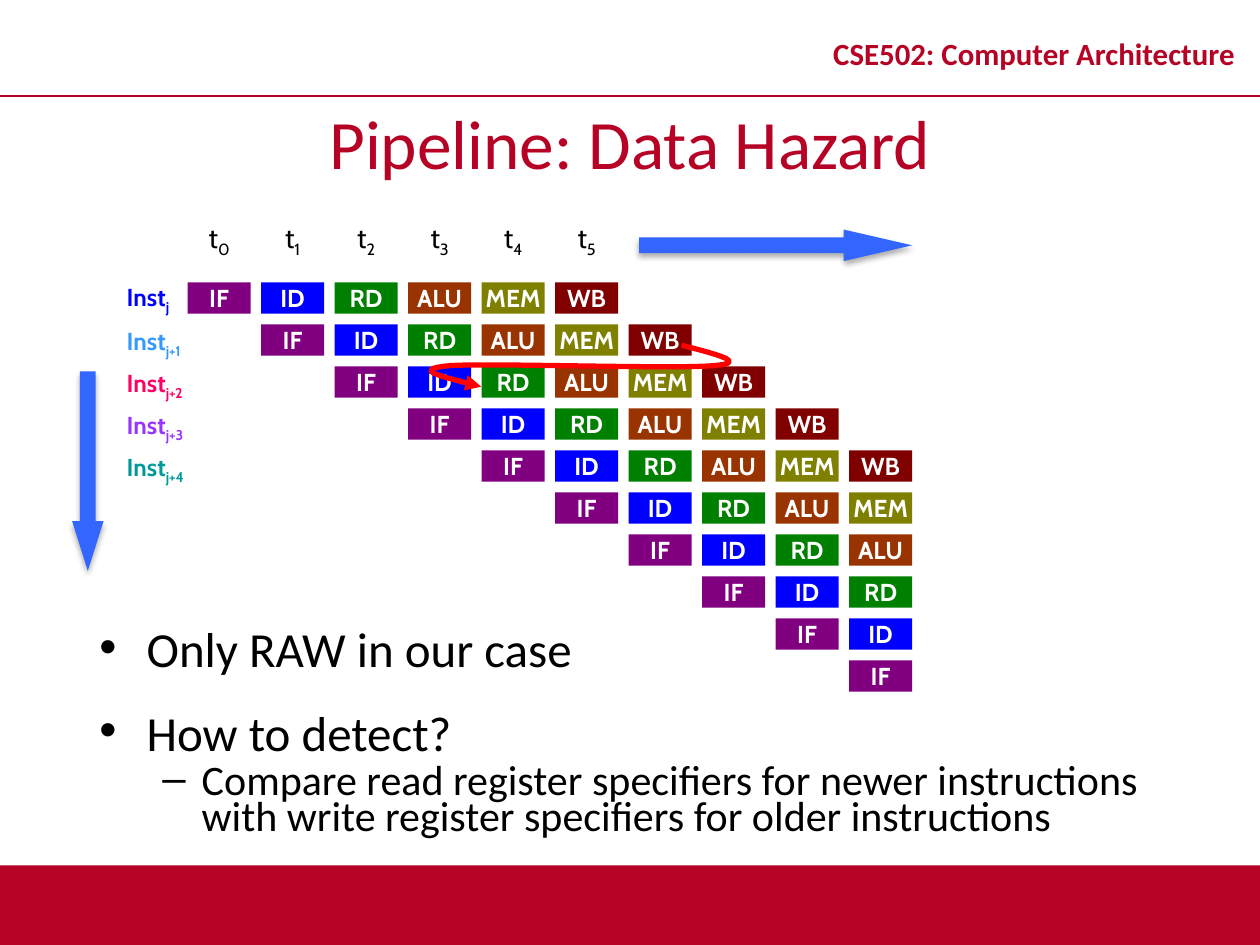
from dataclasses import dataclass
from typing import Optional

from lxml.etree import SubElement
from pptx import Presentation
from pptx.dml.color import RGBColor
from pptx.enum.shapes import MSO_CONNECTOR as Conn, MSO_SHAPE as Shape
from pptx.enum.text import MSO_ANCHOR as Anchor, PP_ALIGN as Align
from pptx.oxml.ns import qn
from pptx.util import Pt

CRIMSON, BLUE, BLACK, WHITE = "B60225", "3366FF", "000000", "FFFFFF"
COL_STEP, ROW_STEP, CELL_W, CELL_H = 42, 24, 36, 18
GRID_LEFT, GRID_TOP, COLUMNS = 107.25, 161.3, 10


@dataclass
class Box:
    left: float
    top: float
    width: float
    height: float

    def lengths(self) -> list:
        return [Pt(v) for v in (self.left, self.top, self.width, self.height)]


@dataclass
class Style:
    size: float
    color: str
    font: str = "Calibri"
    bold: bool = False


@dataclass
class Stage:
    name: str
    color: str


@dataclass
class Instruction:
    subscript: str
    color: str
    top: float
    width: float


@dataclass
class Shadow:
    alpha: int
    blur: float
    distance: float


@dataclass
class Bullet:
    text: str
    char: str
    size: float
    margin: float
    hanging: float
    before: float
    level: int = 0


STAGES = [Stage("IF", "800080"), Stage("ID", "0000FF"), Stage("RD", "008000"),
          Stage("ALU", "993300"), Stage("MEM", "808000"), Stage("WB", "800000")]
INSTRUCTIONS = [Instruction("j", "0000FF", 161.3, 48),
                Instruction("j+1", "3399FF", 186.3, 60),
                Instruction("j+2", "FF0066", 210.3, 66),
                Instruction("j+3", "9933FF", 234.3, 66),
                Instruction("j+4", "009999", 258.3, 72)]
BULLETS = [Bullet("Only RAW in our case", "•", 28, 27, 27, 0),
           Bullet("How to detect?", "•", 28, 27, 27, 24),
           Bullet("Compare read register specifiers for newer instructions "
                  "with write register specifiers for older instructions",
                  "–", 24, 58.5, 22.5, 4.8, 1)]
HAZARD_PATH = [(389.5, 197.3), (409, 202.3), (429, 207.4), (407.5, 209),
               (385.5, 211), (279, 207.4), (257, 209), (235.5, 211),
               (255, 216), (275, 221)]


def rgb(color: str) -> RGBColor:
    return RGBColor.from_string(color)


def style_run(r, style: Style) -> None:
    r.font.size = Pt(style.size)
    r.font.name = style.font
    r.font.bold = style.bold
    r.font.color.rgb = rgb(style.color)


def add_text(slide, box: Box, text: str, style: Style, subscript: str = "",
             align=Align.CENTER, anchor=Anchor.TOP, inset: float = 3.6, spacing: float = 1):
    tf = slide.shapes.add_textbox(*box.lengths()).text_frame
    tf.word_wrap = True
    tf.vertical_anchor = anchor
    tf.margin_top = tf.margin_bottom = Pt(inset)
    tf.text = text
    p = tf.paragraphs[0]
    p.alignment = align
    p.line_spacing = spacing
    if subscript:
        r = p.add_run()
        r.text = subscript
        r.font._element.set("baseline", "-25000")
    for r in p.runs:
        style_run(r, style)


def add_solid(slide, kind, box: Box, color: str, shadow: Optional[Shadow] = None):
    sp = slide.shapes.add_shape(kind, *box.lengths())
    sp.fill.solid()
    sp.fill.fore_color.rgb = rgb(color)
    sp.line.fill.background()
    sp.shadow.inherit = False
    if shadow:
        effects = sp._element.spPr.find(qn("a:effectLst"))
        outer = SubElement(effects, qn("a:outerShdw"), blurRad=str(Pt(shadow.blur)),
                           dist=str(Pt(shadow.distance)), dir="5400000", rotWithShape="0")
        black = SubElement(outer, qn("a:srgbClr"), val=BLACK)
        SubElement(black, qn("a:alpha"), val=str(shadow.alpha * 1000))
    return sp


def add_cell(slide, row: int, col: int, stage: Stage) -> None:
    box = Box(GRID_LEFT + col * COL_STEP, GRID_TOP + row * ROW_STEP, CELL_W, CELL_H)
    tf = add_solid(slide, Shape.RECTANGLE, box, stage.color).text_frame
    tf.word_wrap = False
    tf.vertical_anchor = Anchor.MIDDLE
    tf.text = stage.name
    p = tf.paragraphs[0]
    p.alignment = Align.CENTER
    style_run(p.runs[0], Style(14, WHITE, "Cabin", True))


def add_arrow(slide, kind, box: Box, head: float) -> None:
    sp = add_solid(slide, kind, box, BLUE, Shadow(32, 3.5, 2.2))
    sp.adjustments[0] = 0.5
    sp.adjustments[1] = head


def add_curve(slide, points: list, color: str, width: float) -> None:
    start, *rest = [(Pt(x), Pt(y)) for x, y in points]
    builder = slide.shapes.build_freeform(*start)
    builder.add_line_segments(rest, close=False)
    sp = builder.convert_to_shape()
    sp.fill.background()
    sp.shadow.inherit = False
    sp.line.color.rgb = rgb(color)
    sp.line.width = Pt(width)
    SubElement(sp.line._get_or_add_ln(), qn("a:tailEnd"), type="triangle")
    outline = next(sp._element.iter(qn("a:path")))
    segments = outline.findall(qn("a:lnTo"))
    for i in range(0, len(segments), 3):
        bezier = SubElement(outline, qn("a:cubicBezTo"))
        for segment in segments[i:i + 3]:
            bezier.append(segment[0])
            outline.remove(segment)


def add_bullets(slide, box: Box, bullets: list) -> None:
    tf = slide.shapes.add_textbox(*box.lengths()).text_frame
    tf.word_wrap = True
    for i, bullet in enumerate(bullets):
        p = tf.add_paragraph() if i else tf.paragraphs[0]
        p.text = bullet.text
        p.level = bullet.level
        p.line_spacing = 0.7
        p.space_before = Pt(bullet.before)
        ppr = p._p.get_or_add_pPr()
        ppr.set("marL", str(Pt(bullet.margin)))
        ppr.set("indent", str(-Pt(bullet.hanging)))
        SubElement(ppr, qn("a:buFont"), typeface="Arial")
        SubElement(ppr, qn("a:buChar"), char=bullet.char)
        style_run(p.runs[0], Style(bullet.size, BLACK))


def add_frame(slide) -> None:
    add_solid(slide, Shape.RECTANGLE, Box(0, 494.6, 720, 45.4), CRIMSON, Shadow(35, 3.1, 1.8))
    rule = slide.shapes.add_connector(Conn.STRAIGHT, Pt(0), Pt(54.7), Pt(720), Pt(54.7))
    rule.line.color.rgb = rgb(CRIMSON)
    rule.line.width = Pt(1)
    SubElement(rule._element.spPr, qn("a:effectLst"))
    add_text(slide, Box(462, 9.4, 258, 45.4), "CSE502: Computer Architecture",
             Style(17.6, CRIMSON, bold=True), anchor=Anchor.MIDDLE, spacing=0.8)
    add_text(slide, Box(49.7, 53.3, 620.6, 55.4), "Pipeline: Data Hazard",
             Style(39.6, CRIMSON), anchor=Anchor.MIDDLE)


def main() -> None:
    prs = Presentation()
    prs.slide_width, prs.slide_height = Pt(720), Pt(540)
    slide = prs.slides.add_slide(prs.slide_layouts[6])
    add_frame(slide)
    add_bullets(slide, Box(49.7, 359.3, 620.6, 127.4), BULLETS)
    for t in range(len(STAGES)):
        add_text(slide, Box(GRID_LEFT + t * COL_STEP, 122.4, CELL_W, 26.6), "t",
                 Style(16, BLACK, "Cabin"), str(t))
    add_arrow(slide, Shape.RIGHT_ARROW, Box(365.2, 131.2, 156, 18), 2.17)
    for row in range(COLUMNS):
        for col, stage in enumerate(STAGES[:COLUMNS - row], row):
            add_cell(slide, row, col, stage)
    add_curve(slide, HAZARD_PATH, "FF0000", 3)
    for inst in INSTRUCTIONS:
        add_text(slide, Box(65.3, inst.top, inst.width, 17), "Inst",
                 Style(14, inst.color, "Cabin", True), inst.subscript, Align.LEFT, inset=0)
    add_arrow(slide, Shape.DOWN_ARROW, Box(41.2, 212.2, 18, 114), 1.58)
    prs.save("out.pptx")


if __name__ == "__main__":
    main()
